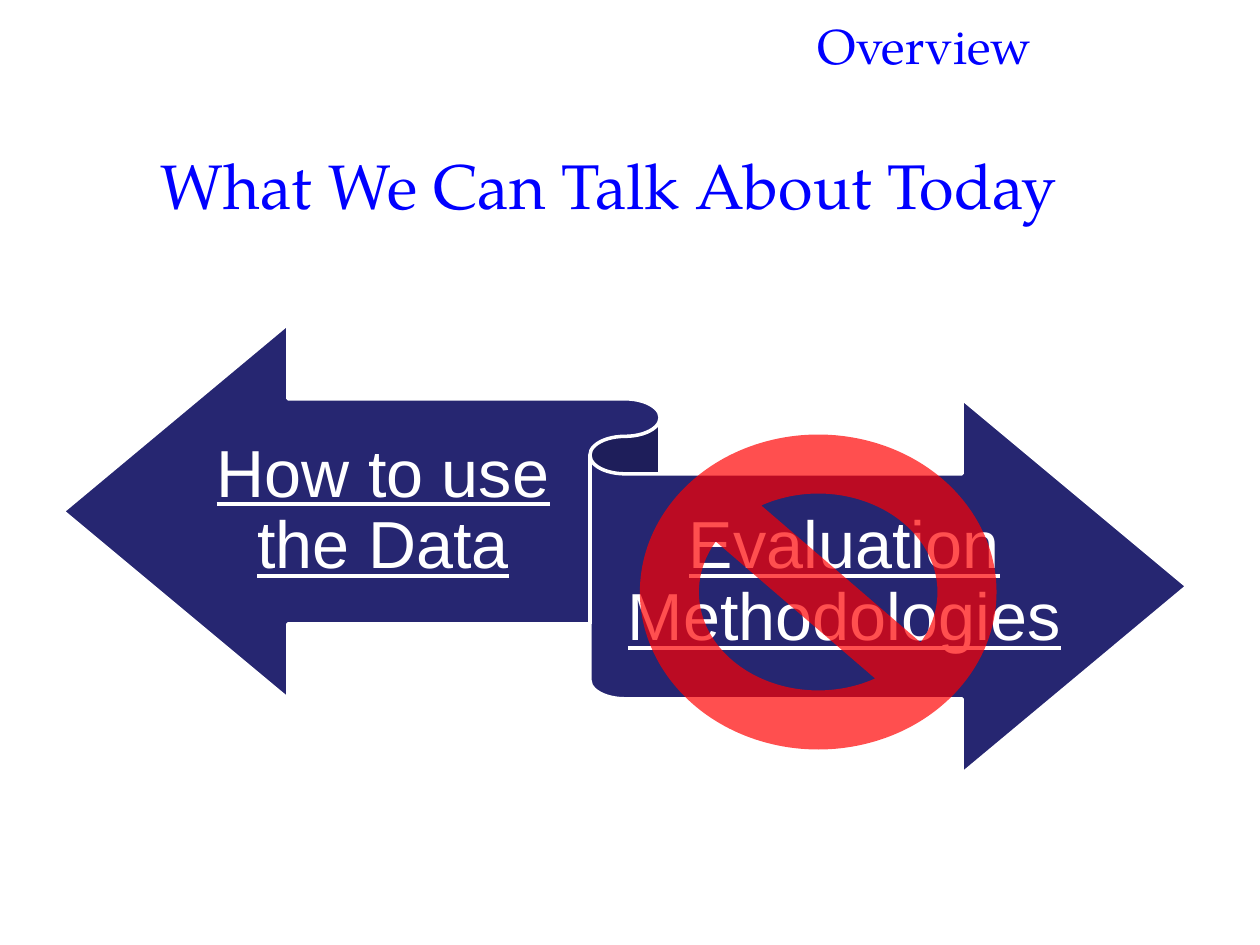
from dataclasses import dataclass

import lxml.etree
import pptx
import pptx.dml.color
import pptx.enum.shapes
import pptx.enum.text
import pptx.oxml.ns
import pptx.util

Cm = pptx.util.Cm
RGB = pptx.dml.color.RGBColor
Preset = pptx.enum.shapes.MSO_SHAPE


@dataclass(frozen=True)
class Theme:
    heading_font: str = "TeX Gyre Pagella"
    label_font: str = "Arial"
    blue: str = "0000FF"
    navy: str = "262671"
    red: str = "FF0000"
    white: str = "FFFFFF"
    title_size: int = 36
    overview_size: int = 28
    label_size: int = 38
    sign_opacity: int = 69


@dataclass(frozen=True)
class Box:
    left: float
    top: float
    width: float
    height: float

    def lengths(self) -> tuple:
        return Cm(self.left), Cm(self.top), Cm(self.width), Cm(self.height)


@dataclass(frozen=True)
class TextItem:
    text: str
    box: Box
    size: int
    font: str
    color: str
    underline: bool = False
    spacing: float = 1.0
    insets: tuple = (0.25, 0.13, 0.25, 0.13)


THEME = Theme()


def ribbon_label(text: str, box: Box) -> TextItem:
    return TextItem(text, box, THEME.label_size, THEME.label_font, THEME.white,
                    underline=True, spacing=0.9, insets=(0, 0.38, 0, 0.41))


def heading(text: str, box: Box, size: int) -> TextItem:
    return TextItem(text, box, size, THEME.heading_font, THEME.blue)


def add_text(slide, item: TextItem) -> None:
    tf = slide.shapes.add_textbox(*item.box.lengths()).text_frame
    tf.word_wrap = True
    tf.vertical_anchor = pptx.enum.text.MSO_ANCHOR.MIDDLE
    tf.margin_left, tf.margin_top, tf.margin_right, tf.margin_bottom = map(Cm, item.insets)
    tf.text = item.text
    p = tf.paragraphs[0]
    p.alignment = pptx.enum.text.PP_ALIGN.CENTER
    p.line_spacing = item.spacing
    r = p.runs[0]
    r.font.name = item.font
    r.font.size = pptx.util.Pt(item.size)
    r.font.color.rgb = RGB.from_string(item.color)
    if item.underline:
        r.font.underline = True


def add_preset(slide, preset: Preset, box: Box, fill: str):
    sp = slide.shapes.add_shape(preset, *box.lengths())
    sp.shadow.inherit = False
    sp.fill.solid()
    sp.fill.fore_color.rgb = RGB.from_string(fill)
    sp.line.fill.background()
    return sp


def set_opacity(sp, percent: int) -> None:
    qn = pptx.oxml.ns.qn
    color = sp.fill._xPr.find(qn("a:solidFill")).find(qn("a:srgbClr"))
    lxml.etree.SubElement(color, qn("a:alpha")).set("val", str(percent * 1000))


def main() -> None:
    prs = pptx.Presentation()
    prs.slide_width, prs.slide_height = Cm(25.4), Cm(19.05)
    s = prs.slides.add_slide(prs.slide_layouts[6])

    add_text(s, heading("What We Can Talk About Today",
                        Box(2.11, 2.34, 20.32, 2.74), THEME.title_size))

    ribbon = add_preset(s, Preset.LEFT_RIGHT_RIBBON, Box(1.27, 6.53, 22.66, 9.07), THEME.navy)
    ribbon.line.color.rgb = RGB.from_string(THEME.white)
    ribbon.line.width = pptx.util.Pt(2)

    add_text(s, ribbon_label("How to use the Data", Box(3.99, 8.1, 7.47, 4.45)))
    add_text(s, ribbon_label("Evaluation Methodologies", Box(12.6, 9.55, 8.84, 4.45)))
    add_text(s, heading("Overview", Box(13.77, 0.23, 9.73, 1.37), THEME.overview_size))

    sign = add_preset(s, Preset.NO_SYMBOL, Box(12.9, 8.76, 7.19, 6.35), THEME.red)
    set_opacity(sign, THEME.sign_opacity)

    prs.save("out.pptx")


if __name__ == "__main__":
    main()
